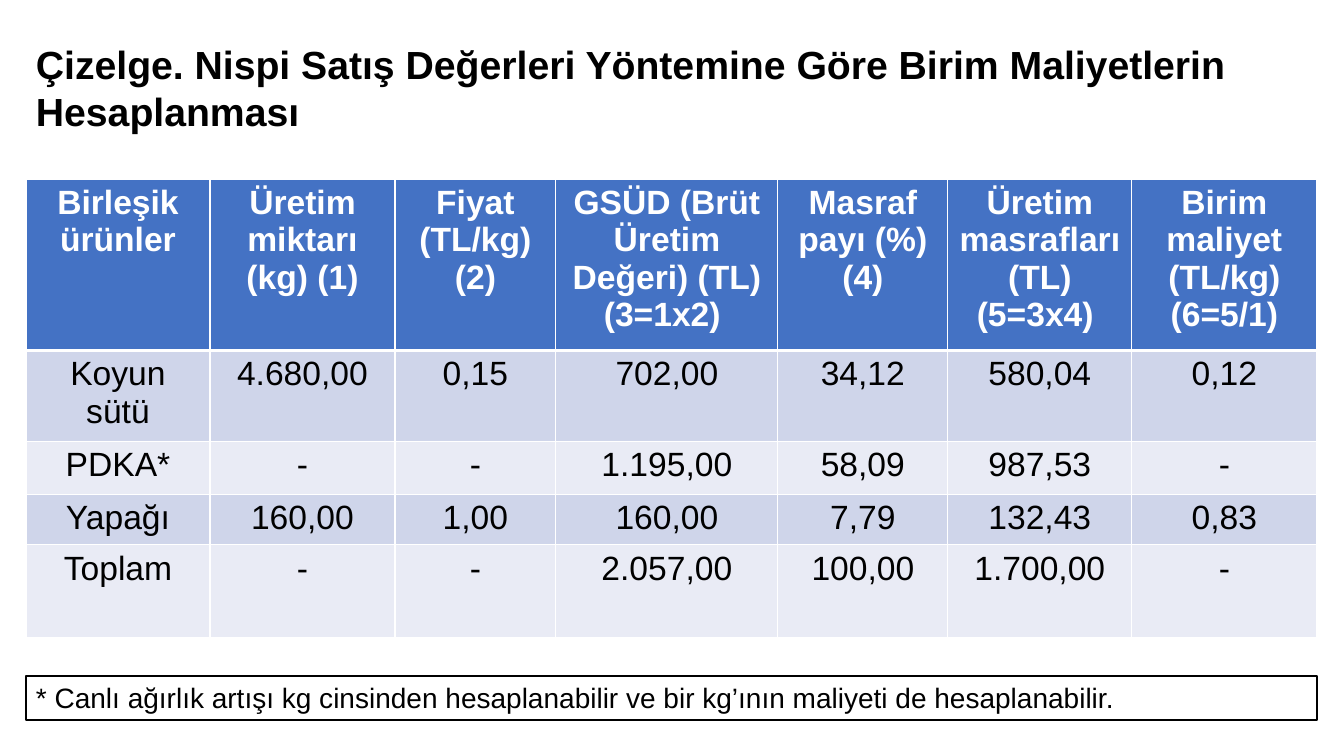
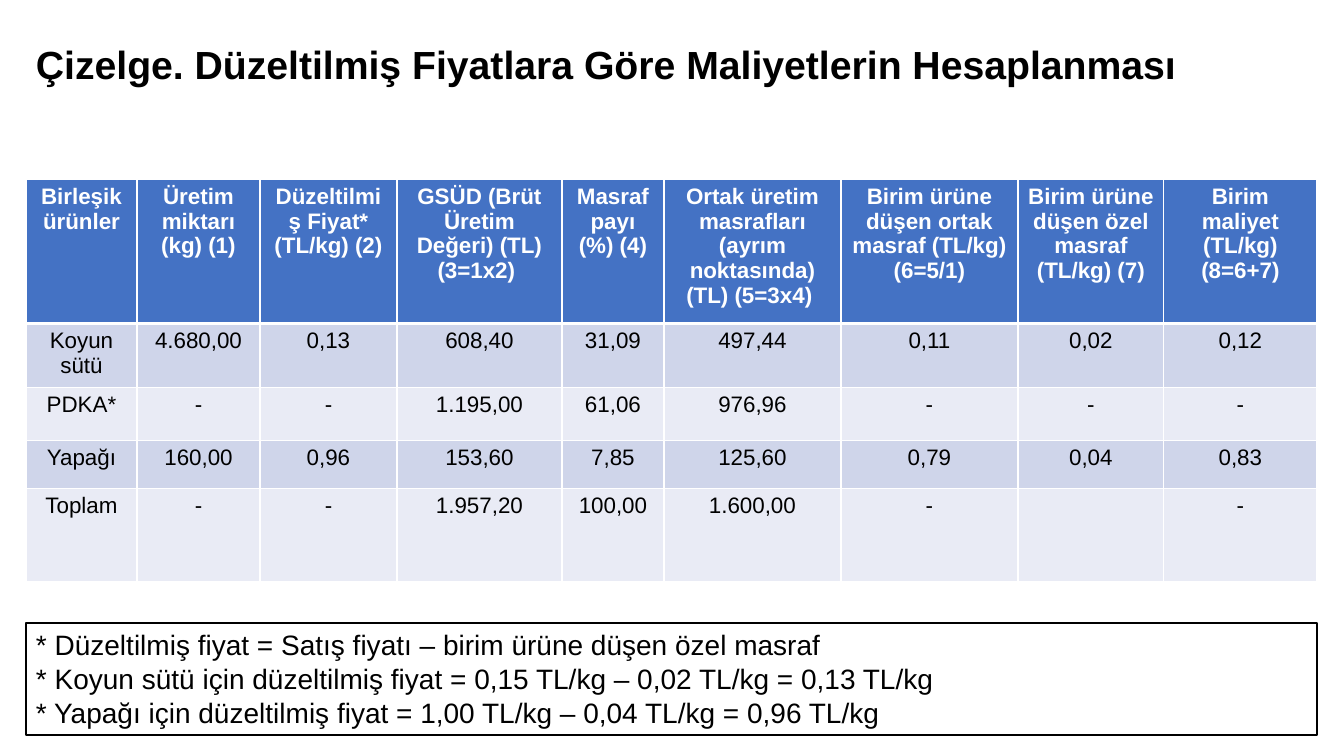
from dataclasses import dataclass

from lxml import etree
from pptx import Presentation
from pptx.dml.color import RGBColor
from pptx.enum.text import MSO_AUTO_SIZE, PP_ALIGN
from pptx.oxml.ns import qn
from pptx.util import Emu, Pt

CENTER = PP_ALIGN.CENTER
GROW = MSO_AUTO_SIZE.SHAPE_TO_FIT_TEXT

SLIDE_WIDTH, SLIDE_HEIGHT = 1344, 756
EMU_PER_PX = 12192000 / SLIDE_WIDTH
BLANK_LAYOUT = 6

FONT = "Arial"
COLORS = {
    "text": "000000",
    "paper": "FFFFFF",
    "header": "4472C4",
    "odd row": "CFD5EA",
    "even row": "E9EBF5",
}
LEFT, CONTENT_WIDTH = 26, 1291
TITLE_TOP, TABLE_TOP = 35, 179
TITLE_SIZE, NOTE_SIZE = 28, 20
BORDER, HEADER_RULE = 1, 3


@dataclass(frozen=True)
class CostSlide:
    title: str
    title_height: int
    column_widths: list[int]
    row_heights: list[int]
    table_size: int
    rows: list[list[str]]
    note: str
    note_top: int
    note_height: int


COST_SLIDES = [
    CostSlide(
        title="Çizelge. Nispi Satış Değerleri Yöntemine Göre Birim Maliyetlerin Hesaplanması",
        title_height=105,
        column_widths=[184, 185, 161, 222, 170, 184, 185],
        row_heights=[171, 91, 53, 50, 93],
        table_size=24,
        rows=[
            ["Birleşik ürünler", "Üretim miktarı (kg) (1)", "Fiyat (TL/kg) (2)",
             "GSÜD (Brüt Üretim Değeri) (TL) (3=1x2) ", "Masraf payı (%) (4)",
             "Üretim masrafları (TL) (5=3x4) ", "Birim maliyet (TL/kg) (6=5/1)"],
            ["Koyun sütü", "4.680,00", "0,15", "702,00", "34,12", "580,04", "0,12"],
            ["PDKA*", "-", "-", "1.195,00", "58,09", "987,53", "-"],
            ["Yapağı", "160,00", "1,00", "160,00", "7,79", "132,43", "0,83"],
            ["Toplam", "-", "-", "2.057,00", "100,00", "1.700,00", "-"],
        ],
        note="* Canlı ağırlık artışı kg cinsinden hesaplanabilir ve bir kg’ının maliyeti de "
             "hesaplanabilir.",
        note_top=676,
        note_height=44,
    ),
    CostSlide(
        title="Çizelge. Düzeltilmiş Fiyatlara Göre Maliyetlerin Hesaplanması",
        title_height=57,
        column_widths=[111, 123, 137, 165, 102, 177, 177, 146, 153],
        row_heights=[144, 64, 53, 48, 93],
        table_size=16,
        rows=[
            ["Birleşik ürünler", "Üretim miktarı (kg) (1)", "Düzeltilmiş Fiyat* (TL/kg) (2)",
             "GSÜD (Brüt Üretim Değeri) (TL) (3=1x2) ", "Masraf payı (%) (4)",
             "Ortak üretim masrafları (ayrım noktasında) (TL) (5=3x4) ",
             "Birim ürüne düşen ortak masraf (TL/kg) (6=5/1)",
             "Birim ürüne düşen özel masraf (TL/kg) (7)", "Birim maliyet (TL/kg) (8=6+7)"],
            ["Koyun sütü", "4.680,00", "0,13", "608,40", "31,09", "497,44", "0,11", "0,02", "0,12"],
            ["PDKA*", "-", "-", "1.195,00", "61,06", "976,96", "-", "-", "-"],
            ["Yapağı", "160,00", "0,96", "153,60", "7,85", "125,60", "0,79", "0,04", "0,83"],
            ["Toplam", "-", "-", "1.957,20", "100,00", "1.600,00", "-", "", "-"],
        ],
        note="* Düzeltilmiş fiyat = Satış fiyatı – birim ürüne düşen özel masraf\n"
             "* Koyun sütü için düzeltilmiş fiyat = 0,15 TL/kg – 0,02 TL/kg = 0,13 TL/kg\n"
             "* Yapağı için düzeltilmiş fiyat = 1,00 TL/kg – 0,04 TL/kg = 0,96 TL/kg",
        note_top=623,
        note_height=112,
    ),
]


def px(length: int) -> Emu:
    return Emu(round(length * EMU_PER_PX))


def color(name: str) -> RGBColor:
    return RGBColor.from_string(COLORS[name])


def set_text(text_frame, text: str, size: int, color_name: str = "text",
             bold: bool = False, alignment=None) -> None:
    text_frame.text = text
    for paragraph in text_frame.paragraphs:
        paragraph.alignment = alignment
        for run in paragraph.runs:
            run.font.name = FONT
            run.font.size = Pt(size)
            run.font.bold = bold
            run.font.color.rgb = color(color_name)


def add_text_box(slide, top: int, height: int, text: str, size: int, bold: bool = False):
    """Add a text box as wide as the content."""
    box = slide.shapes.add_textbox(px(LEFT), px(top), px(CONTENT_WIDTH), px(height))
    box.text_frame.word_wrap = True
    box.text_frame.auto_size = GROW
    set_text(box.text_frame, text, size, bold=bold)
    return box


def add_note(slide, content: CostSlide) -> None:
    box = add_text_box(slide, content.note_top, content.note_height, content.note, NOTE_SIZE)
    box.fill.solid()
    box.fill.fore_color.rgb = color("paper")
    box.line.color.rgb = color("text")
    box.line.width = Pt(BORDER)


def set_borders(cell, top: int, bottom: int) -> None:
    """Draw white cell borders; must run before the cell is filled."""
    properties = cell._tc.get_or_add_tcPr()
    for side, width in (("L", BORDER), ("R", BORDER), ("T", top), ("B", bottom)):
        line = etree.SubElement(properties, qn(f"a:ln{side}"), w=str(Pt(width)))
        fill = etree.SubElement(line, qn("a:solidFill"))
        etree.SubElement(fill, qn("a:srgbClr"), val=COLORS["paper"])


def add_cost_table(slide, content: CostSlide) -> None:
    table = slide.shapes.add_table(
        len(content.rows), len(content.column_widths), px(LEFT), px(TABLE_TOP),
        px(sum(content.column_widths)), px(sum(content.row_heights))).table
    for column, width in zip(table.columns, content.column_widths):
        column.width = px(width)
    for row, height in zip(table.rows, content.row_heights):
        row.height = px(height)
    for row_index, texts in enumerate(content.rows):
        is_header = row_index == 0
        band = "header" if is_header else "odd row" if row_index % 2 else "even row"
        for column_index, text in enumerate(texts):
            cell = table.cell(row_index, column_index)
            set_borders(cell, top=HEADER_RULE if row_index == 1 else BORDER,
                        bottom=HEADER_RULE if is_header else BORDER)
            cell.fill.solid()
            cell.fill.fore_color.rgb = color(band)
            set_text(cell.text_frame, text, content.table_size,
                     "paper" if is_header else "text", is_header, CENTER)


def main() -> None:
    presentation = Presentation()
    presentation.slide_width = px(SLIDE_WIDTH)
    presentation.slide_height = px(SLIDE_HEIGHT)
    for content in COST_SLIDES:
        slide = presentation.slides.add_slide(presentation.slide_layouts[BLANK_LAYOUT])
        add_text_box(slide, TITLE_TOP, content.title_height, content.title, TITLE_SIZE, bold=True)
        add_cost_table(slide, content)
        add_note(slide, content)
    presentation.save("out.pptx")


if __name__ == "__main__":
    main()
